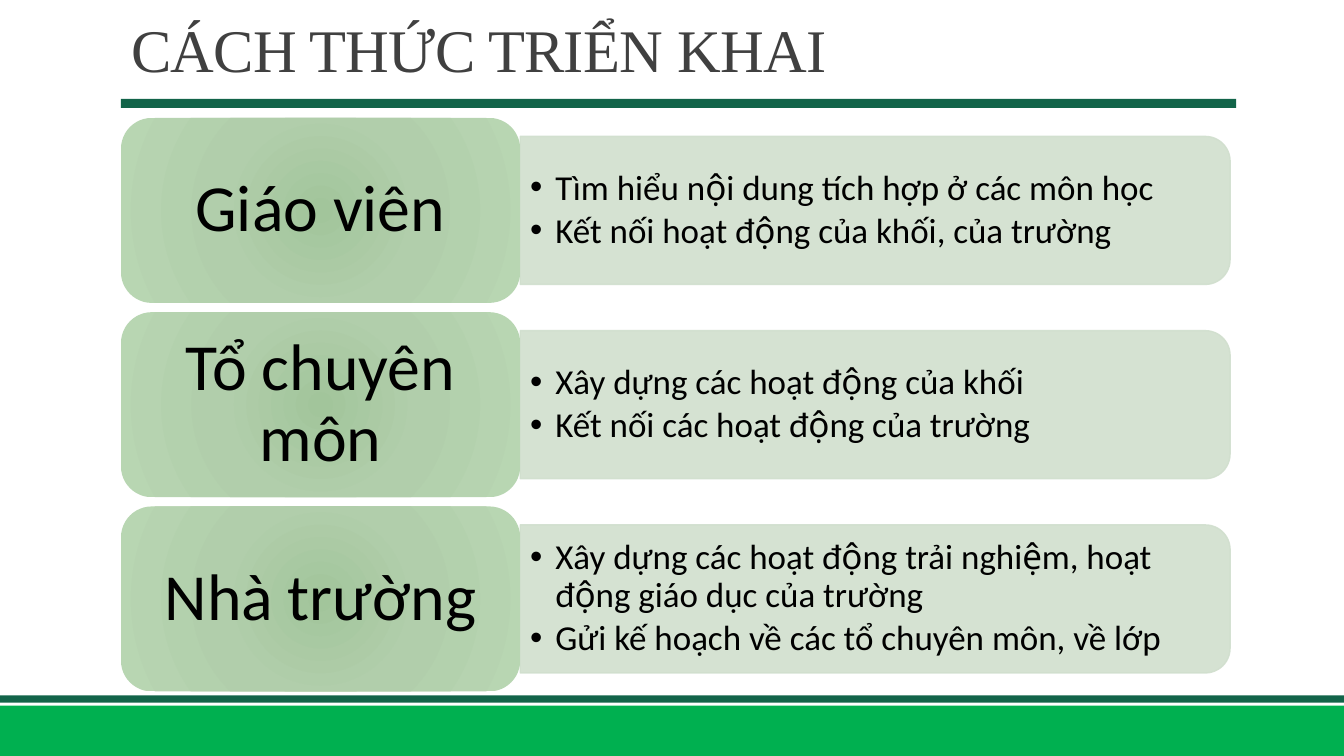
from dataclasses import dataclass

from lxml.etree import SubElement
from pptx import Presentation
from pptx.dml.color import RGBColor
from pptx.enum.shapes import MSO_SHAPE
from pptx.enum.text import MSO_ANCHOR, MSO_AUTO_SIZE, PP_ALIGN
from pptx.oxml import parse_xml
from pptx.oxml.ns import nsdecls, qn
from pptx.util import Inches, Pt


@dataclass(frozen=True)
class Theme:
    band: str = "00B050"
    rule: str = "126449"
    title: str = "404040"
    text: str = "000000"
    panel: str = "D1DFCE"
    panel_alpha: int = 90
    label_stops: tuple = ((0, "A2C59B"), (45, "B1CEAB"), (100, "B8D6B2"))
    title_font: str = "Times New Roman"
    body_font: str = "Calibri"
    title_size: float = 43.2
    label_size: float = 47
    bullet_size: float = 25


THEME = Theme()
WIDTH, HEIGHT = 13.33, 7.5
LEFT = 1.2
TITLE = "CÁCH THỨC TRIỂN KHAI"
ROWS = [
    ("Giáo viên", ["Tìm hiểu nội dung tích hợp ở các môn học",
                   "Kết nối hoạt động của khối, của trường"]),
    ("Tổ chuyên môn", ["Xây dựng các hoạt động của khối",
                       "Kết nối các hoạt động của trường"]),
    ("Nhà trường", ["Xây dựng các hoạt động trải nghiệm, hoạt động giáo dục của trường",
                    "Gửi kế hoạch về các tổ chuyên môn, về lớp"]),
]

# Vietnamese tone marks are stored after their vowel: mark, toned letters, plain letters
TONES = [
    (0x301, "ÁỨáíếố", "AƯaiêô"),
    (0x300, "àìềờ", "aiêơ"),
    (0x309, "Ểảểổởủử", "Êaêôơuư"),
    (0x323, "ạệọộợụự", "aêoôơuư"),
]
TONE_TABLE = {ord(toned): plain + chr(mark)
              for mark, toned_letters, plain_letters in TONES
              for toned, plain in zip(toned_letters, plain_letters)}


def with_tone_marks(text):
    return text.translate(TONE_TABLE)


def add_box(slide, kind, x, y, w, h, color):
    sp = slide.shapes.add_shape(kind, Inches(x), Inches(y), Inches(w), Inches(h))
    sp.shadow.inherit = False
    sp.fill.solid()
    sp.fill.fore_color.rgb = RGBColor.from_string(color)
    sp.line.fill.background()
    return sp


def set_frame(tf, text, anchor, inset_x, inset_y):
    tf.text = with_tone_marks(text)
    tf.word_wrap = True
    tf.auto_size = MSO_AUTO_SIZE.NONE
    tf.vertical_anchor = anchor
    tf.margin_left = tf.margin_right = Inches(inset_x)
    tf.margin_top = tf.margin_bottom = Inches(inset_y)


def style_paragraph(p, font, size, color, align, spacing):
    p.alignment = align
    p.line_spacing = spacing
    for r in p.runs:
        r.font.name = font
        r.font.size = Pt(size)
        r.font.color.rgb = RGBColor.from_string(color)


def set_alpha(fill, percent):
    for clr in fill.iter(qn("a:srgbClr")):
        SubElement(clr, qn("a:alpha")).set("val", str(percent * 1000))


def set_radial_fill(sp, stops):
    gs = "".join(f'<a:gs pos="{pos * 1000}"><a:srgbClr val="{color}"/></a:gs>'
                 for pos, color in stops)
    grad = parse_xml(
        f'<a:gradFill {nsdecls("a")} rotWithShape="1"><a:gsLst>{gs}</a:gsLst>'
        '<a:path path="circle"><a:fillToRect l="100000" t="100000" r="100000" b="100000"/>'
        '</a:path></a:gradFill>')
    solid = sp.fill._xPr.find(qn("a:solidFill"))
    solid.getparent().replace(solid, grad)


def add_background(slide):
    # Footer band with its rule, and the rule below the title
    for x, y, w, h, color in ((0, 7, WIDTH, 0.5, THEME.band),
                              (0, 6.9, WIDTH, 0.07, THEME.rule),
                              (LEFT, 0.98, 11.06, 0.09, THEME.rule)):
        add_box(slide, MSO_SHAPE.RECTANGLE, x, y, w, h, color)


def add_title(slide, x, y, w, h):
    title = slide.shapes.title
    title.left, title.top, title.width, title.height = map(Inches, (x, y, w, h))
    set_frame(title.text_frame, TITLE, MSO_ANCHOR.BOTTOM, 0.1, 0.05)
    p = title.text_frame.paragraphs[0]
    style_paragraph(p, THEME.title_font, THEME.title_size, THEME.title, PP_ALIGN.LEFT, 0.85)
    p.runs[0].font._element.set("spc", "-50")


def add_panel(slide, x, y, w, h):
    # Turned a quarter so that the rounded corners lie on the right
    sp = add_box(slide, MSO_SHAPE.ROUND_2_SAME_RECTANGLE,
                 x + (w - h) / 2, y + (h - w) / 2, h, w, THEME.panel)
    sp.rotation = 90
    sp.line.color.rgb = RGBColor.from_string(THEME.panel)
    sp.line.width = Pt(1)
    set_alpha(sp._element.spPr, THEME.panel_alpha)


def add_bullets(slide, x, y, w, h, bullets):
    tf = slide.shapes.add_textbox(Inches(x), Inches(y), Inches(w), Inches(h)).text_frame
    set_frame(tf, "\n".join(bullets), MSO_ANCHOR.MIDDLE, 0.1, 0.05)
    for p in tf.paragraphs:
        style_paragraph(p, THEME.body_font, THEME.bullet_size, THEME.text, PP_ALIGN.LEFT, 0.9)
        p.space_after = Pt(0.15 * THEME.bullet_size)
        pPr = p._p.get_or_add_pPr()
        pPr.set("marL", str(Inches(0.25)))
        pPr.set("indent", str(-Inches(0.25)))
        SubElement(pPr, qn("a:buFont")).set("typeface", "Arial")
        SubElement(pPr, qn("a:buChar")).set("char", "•")


def add_label(slide, x, y, w, h, text):
    sp = add_box(slide, MSO_SHAPE.ROUNDED_RECTANGLE, x, y, w, h, THEME.panel)
    set_radial_fill(sp, THEME.label_stops)
    tf = sp.text_frame
    set_frame(tf, text, MSO_ANCHOR.MIDDLE, 0.23, 0.13)
    style_paragraph(tf.paragraphs[0], THEME.body_font, THEME.label_size, THEME.text,
                    PP_ALIGN.CENTER, 0.9)


def add_row(slide, x, y, w, h, label, bullets):
    label_w = 0.36 * w
    panel_x, panel_w, panel_h = x + label_w, w - label_w, 0.8 * h
    add_panel(slide, panel_x, y + (h - panel_h) / 2, panel_w, panel_h)
    add_bullets(slide, panel_x, y + 0.14 * h, panel_w - 0.07, 0.72 * h, bullets)
    add_label(slide, x, y, label_w, h, label)


def add_rows(slide, x, y, w, h):
    # Equal rows, the gap being a twentieth of a row
    row_h = h / (len(ROWS) + 0.05 * (len(ROWS) - 1))
    for i, (label, bullets) in enumerate(ROWS):
        add_row(slide, x, y + i * 1.05 * row_h, w, row_h, label, bullets)


def main():
    prs = Presentation()
    prs.slide_width, prs.slide_height = Inches(WIDTH), Inches(HEIGHT)
    slide = prs.slides.add_slide(prs.slide_layouts[5])
    add_background(slide)
    add_title(slide, LEFT, 0.13, 11, 0.76)
    add_rows(slide, LEFT, 1.17, 11, 5.69)
    prs.save("out.pptx")


if __name__ == "__main__":
    main()
